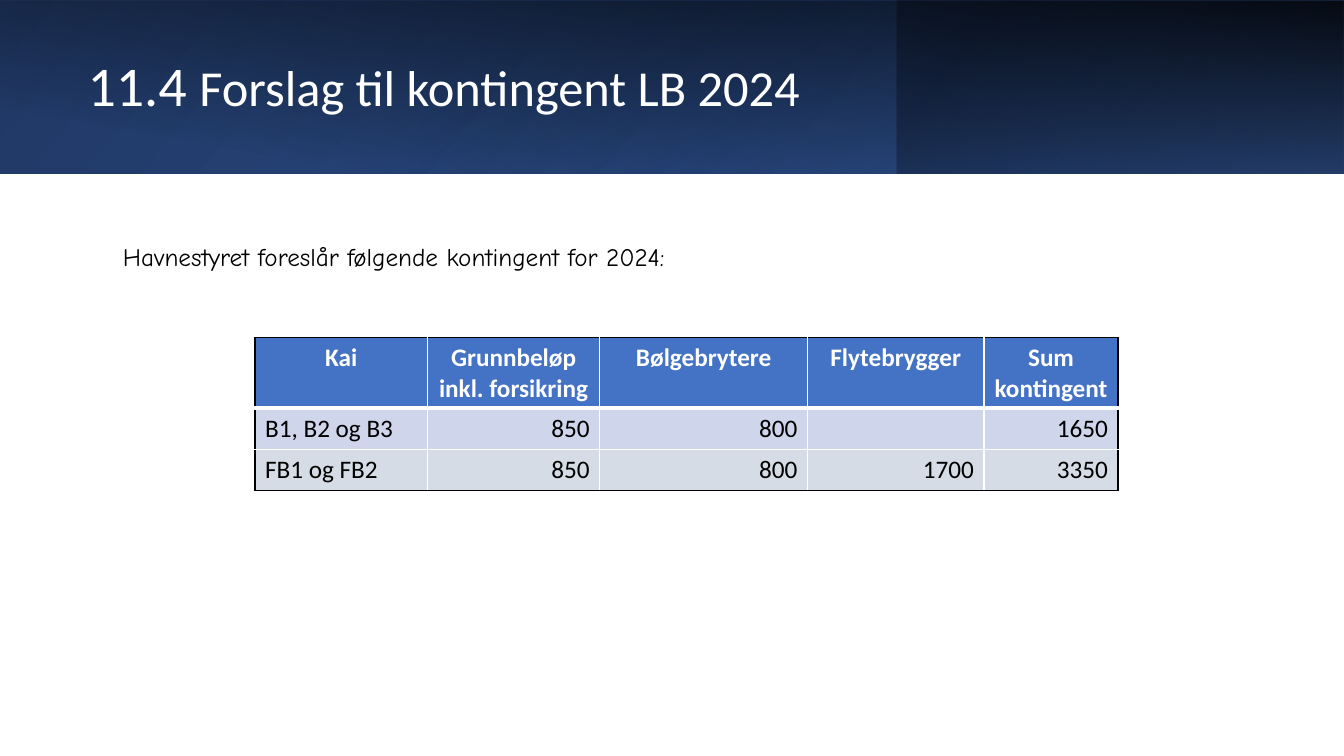
from pptx import Presentation
from pptx.dml.color import RGBColor
from pptx.enum.shapes import MSO_SHAPE
from pptx.enum.text import MSO_ANCHOR, PP_ALIGN
from pptx.oxml import parse_xml
from pptx.oxml.ns import nsdecls
from pptx.util import Inches, Pt

COLORS = {"navy": "203864", "mid": "2F5597", "blue": "4472C4", "black": "000000",
          "white": "FFFFFF", "lavender": "CFD5EA", "grey": "D6DCE5"}
ROWS = [
    ["Kai", "Grunnbeløp inkl. forsikring", "Bølgebrytere", "Flytebrygger", "Sum kontingent"],
    ["B1, B2 og B3", "850", "800", "", "1650"],
    ["FB1 og FB2", "850", "800", "1700", "3350"],
]
ROW_FILLS = ["blue", "lavender", "grey"]
COL_WIDTHS = [1.71, 1.71, 2.06, 1.75, 1.33]
ROW_HEIGHTS = [0.69, 0.41, 0.41]


def rgb(name):
    return RGBColor.from_string(COLORS[name])


def add_run(p, text, size=18, font="Calibri", color="black", bold=False):
    r = p.add_run()
    r.text = text
    r.font.size = Pt(size)
    r.font.name = font
    r.font.bold = bold
    r.font.color.rgb = rgb(color)


def add_text(s, x, y, w, h, runs, anchor=MSO_ANCHOR.TOP, spacing=1.0):
    """Add a one-paragraph text box; runs is a list of (text, format) pairs."""
    tf = s.shapes.add_textbox(Inches(x), Inches(y), Inches(w), Inches(h)).text_frame
    tf.word_wrap = True
    tf.vertical_anchor = anchor
    p = tf.paragraphs[0]
    p.line_spacing = spacing
    for text, fmt in runs:
        add_run(p, text, **fmt)


def add_gradient(s, x, y, w, h, stops, angle, rotation=0, flip=False):
    """Add a borderless rectangle; stops are (position %, colour, opacity %)."""
    sp = s.shapes.add_shape(MSO_SHAPE.RECTANGLE, Inches(x), Inches(y), Inches(w), Inches(h))
    sp.shadow.inherit = False
    sp.line.fill.background()
    sp.rotation = rotation
    spPr = sp._element.spPr
    if flip:
        spPr.xfrm.set("flipH", "1")
    stops_xml = "".join(
        f'<a:gs pos="{pos * 1000}"><a:srgbClr val="{COLORS[color]}">'
        f'<a:alpha val="{alpha * 1000}"/></a:srgbClr></a:gs>'
        for pos, color, alpha in stops)
    sp.fill.gradient()
    spPr.replace(spPr.gradFill, parse_xml(
        f'<a:gradFill {nsdecls("a")} rotWithShape="1"><a:gsLst>{stops_xml}</a:gsLst>'
        f'<a:lin ang="{angle * 60000}" scaled="0"/></a:gradFill>'))


def set_border(cell, side, color, width=1):
    cell._tc.get_or_add_tcPr().append(parse_xml(
        f'<a:ln{side} {nsdecls("a")} w="{Pt(width)}"><a:solidFill>'
        f'<a:srgbClr val="{COLORS[color]}"/></a:solidFill></a:ln{side}>'))


def add_fee_table(s, x, y):
    last_row, last_col = len(ROWS) - 1, len(COL_WIDTHS) - 1
    table = s.shapes.add_table(
        len(ROWS), len(COL_WIDTHS), Inches(x), Inches(y),
        Inches(sum(COL_WIDTHS)), Inches(sum(ROW_HEIGHTS))).table
    for column, width in zip(table.columns, COL_WIDTHS):
        column.width = Inches(width)
    for i, values in enumerate(ROWS):
        table.rows[i].height = Inches(ROW_HEIGHTS[i])
        header = i == 0
        for j, value in enumerate(values):
            cell = table.cell(i, j)
            # Black outer frame, white inner lines, thick line below the header
            outer = {"L": j == 0, "R": j == last_col, "T": header, "B": i == last_row}
            for side, on_edge in outer.items():
                set_border(cell, side, "black" if on_edge else "white",
                           3 if header and side == "B" else 1)
            cell.fill.solid()
            cell.fill.fore_color.rgb = rgb(ROW_FILLS[i])
            p = cell.text_frame.paragraphs[0]
            p.alignment = (PP_ALIGN.CENTER if header
                           else PP_ALIGN.RIGHT if j else PP_ALIGN.LEFT)
            if value:
                add_run(p, value, color="white" if header else "black", bold=header)


def main():
    prs = Presentation()
    prs.slide_width, prs.slide_height = Inches(13.33), Inches(7.5)
    s = prs.slides.add_slide(prs.slide_layouts[6])

    # Layered gradient banner
    add_gradient(s, 0, 0, 13.33, 1.72, [(0, "navy", 100), (100, "mid", 100)], 140, flip=True)
    add_gradient(s, 8.89, 0, 4.44, 1.72, [(19, "navy", 68), (100, "blue", 79)], 320,
                 rotation=180, flip=True)
    add_gradient(s, 5.8, -5.8, 1.72, 13.33, [(16, "black", 0), (99, "black", 87)], 190,
                 rotation=90)
    add_gradient(s, 4.18, 0, 4.71, 1.72, [(0, "blue", 17), (74, "navy", 0)], 240)

    # Title and introduction
    add_text(s, 0.77, 0.39, 11.73, 0.98,
             [("11.4 ", {"size": 40, "color": "white"}),
              ("Forslag til kontingent LB 2024", {"size": 36, "color": "white"})],
             anchor=MSO_ANCHOR.MIDDLE, spacing=0.9)
    add_text(s, 1.12, 2.34, 9.06, 1.01,
             [("Havnestyret foreslår følgende kontingent for 2024:", {"font": "Comic Neue"})])

    # Proposed fees
    add_fee_table(s, 2.53, 3.35)
    prs.save("out.pptx")


if __name__ == "__main__":
    main()
